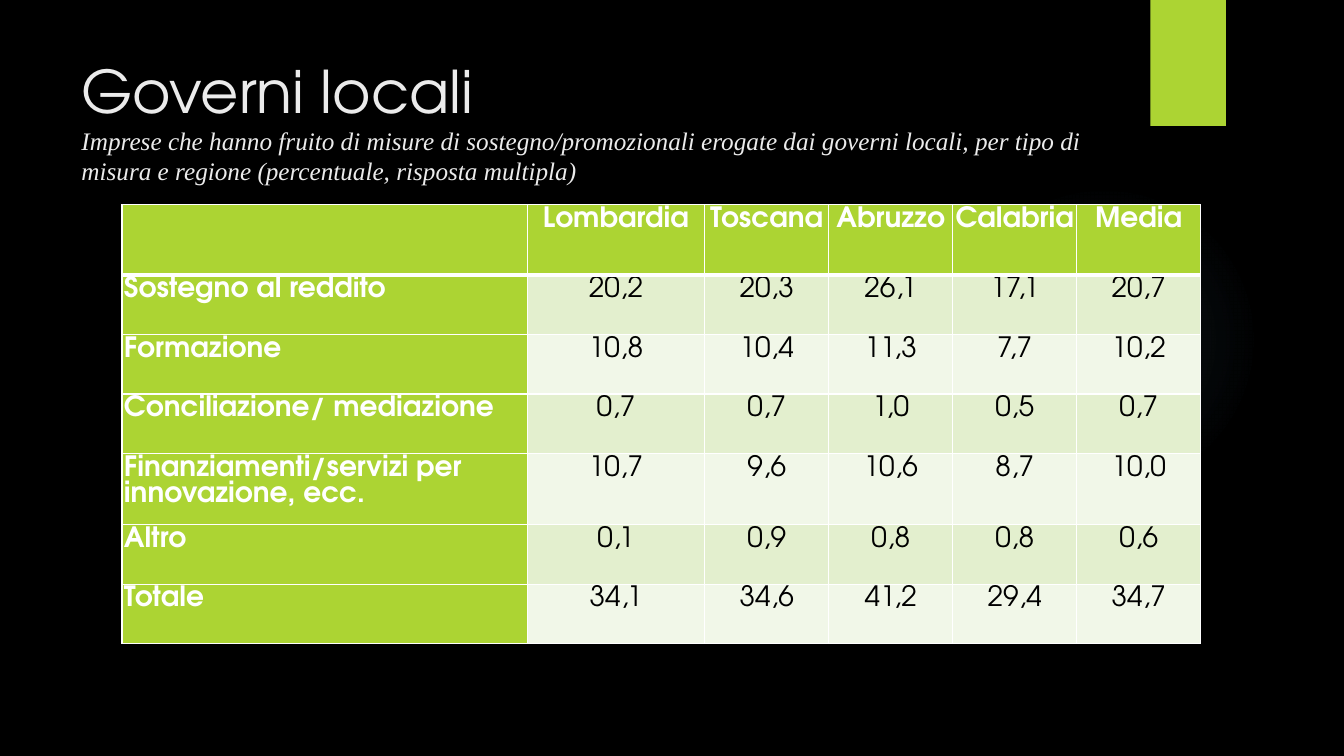
"""Builds the slide on local government support measures by region."""
from dataclasses import dataclass

from lxml import etree
from pptx import Presentation
from pptx import util as u
from pptx.dml import color
from pptx.enum import shapes, text
from pptx.oxml import ns

SANS, SERIF = "TeX Gyre Adventor", "Times New Roman"
LIME, WHITE, BLACK, PALE = "ACD433", "FFFFFF", "000000", "EBEBEB"
BANDS = ("E3EFCE", "F1F7E8")
REGIONS = ("", "Lombardia", "Toscana", "Abruzzo", "Calabria", "Media")
COLUMN_WIDTHS = (4.02, 1.76, 1.23, 1.23, 1.23, 1.23)
HEADER_HEIGHT, ROW_HEIGHT = 0.7, 0.59


@dataclass(frozen=True)
class Measure:
    label: str
    shares: tuple[str, ...]


@dataclass(frozen=True)
class Style:
    size: float
    font: str
    colour: str
    bold: bool = False
    italic: bool = False


TITLE = Style(42, SANS, PALE)
SUBTITLE = Style(18, SERIF, PALE, italic=True)
HEADING = Style(20, SANS, WHITE, bold=True)
FIGURE = Style(20, SANS, BLACK)
MEASURES = (
    Measure("Sostegno al reddito", ("20,2", "20,3", "26,1", "17,1", "20,7")),
    Measure("Formazione", ("10,8", "10,4", "11,3", "7,7", "10,2")),
    Measure("Conciliazione/ mediazione", ("0,7", "0,7", "1,0", "0,5", "0,7")),
    Measure("Finanziamenti/servizi per innovazione, ecc.",
            ("10,7", "9,6", "10,6", "8,7", "10,0")),
    Measure("Altro", ("0,1", "0,9", "0,8", "0,8", "0,6")),
    Measure("Totale", ("34,1", "34,6", "41,2", "29,4", "34,7")),
)


def paint(fill, colour: str) -> None:
    fill.solid()
    fill.fore_color.rgb = color.RGBColor.from_string(colour)


def add_span(para, words: str, style: Style) -> None:
    span = para.add_run()
    span.text = words
    span.font.size = u.Pt(style.size)
    span.font.name = style.font
    span.font.bold = style.bold
    span.font.italic = style.italic
    span.font.color.rgb = color.RGBColor.from_string(style.colour)


def add_plain_shape(page, kind, left: float, top: float, width: float, height: float):
    shape = page.shapes.add_shape(kind, u.Inches(left), u.Inches(top),
                                  u.Inches(width), u.Inches(height))
    shape.shadow.inherit = False
    shape.line.fill.background()
    paint(shape.fill, LIME)
    return shape


def add_glow(page) -> None:
    glow = add_plain_shape(page, shapes.MSO_SHAPE.OVAL, 9.41, 1.83, 3.08, 3.08)
    stops = "".join(
        f'<a:gs pos="{place * 1000}"><a:srgbClr val="7AC4F0">'
        f'<a:alpha val="{alpha * 1000}"/></a:srgbClr></a:gs>'
        for place, alpha in ((0, 7), (36, 6), (69, 0)))
    gradient = etree.fromstring(
        f'<a:gradFill {ns.nsdecls("a")}><a:gsLst>{stops}</a:gsLst><a:path path="circle">'
        '<a:fillToRect l="50000" t="50000" r="50000" b="50000"/></a:path></a:gradFill>')
    properties = glow.element.spPr
    properties.replace(properties.find(ns.qn("a:solidFill")), gradient)


def add_tab(page) -> None:
    tab = add_plain_shape(page, shapes.MSO_SHAPE.RECTANGLE, 11.41, 0, 0.75, 1.25)
    effects = tab.element.spPr.find(ns.qn("a:effectLst"))
    effects.append(etree.fromstring(
        f'<a:outerShdw {ns.nsdecls("a")} blurRad="{u.Pt(3)}" dist="{u.Pt(2)}" '
        'dir="5400000" rotWithShape="0"><a:srgbClr val="000000">'
        '<a:alpha val="45000"/></a:srgbClr></a:outerShdw>'))


def add_title(page) -> None:
    box = page.shapes.add_textbox(u.Inches(0.71), u.Inches(0.49),
                                  u.Inches(10.29), u.Inches(1.53))
    box.text_frame.word_wrap = True
    para = box.text_frame.paragraphs[0]
    add_span(para, "Governi locali", TITLE)
    para.add_line_break()
    add_span(para, "Imprese che hanno fruito di misure di sostegno/promozionali erogate "
             "dai governi locali, per tipo di misura e regione "
             "(percentuale, risposta multipla)", SUBTITLE)


def add_borders(cell, bottom: float, top: float) -> None:
    properties = cell._tc.get_or_add_tcPr()
    for place, (side, width) in enumerate((("L", 1), ("R", 1), ("T", top), ("B", bottom))):
        properties.insert(place, etree.fromstring(
            f'<a:ln{side} {ns.nsdecls("a")} w="{u.Pt(width)}"><a:solidFill>'
            f'<a:srgbClr val="{WHITE}"/></a:solidFill></a:ln{side}>'))


def fill_cell(cell, words: str, row: int, column: int) -> None:
    is_heading = row == 0 or column == 0
    paint(cell.fill, LIME if is_heading else BANDS[(row - 1) % 2])
    add_borders(cell, bottom=3 if row == 0 else 1, top=3 if row == 1 else 1)
    cell.margin_left = cell.margin_right = u.Inches(0.02)
    cell.margin_top = cell.margin_bottom = u.Inches(0.02)
    para = cell.text_frame.paragraphs[0]
    para.line_spacing = 1.0
    para.alignment = text.PP_ALIGN.CENTER if column else text.PP_ALIGN.LEFT
    if words:
        add_span(para, words, HEADING if is_heading else FIGURE)


def add_measures_table(page) -> None:
    rows = [REGIONS] + [(measure.label, *measure.shares) for measure in MEASURES]
    heights = [HEADER_HEIGHT] + [ROW_HEIGHT] * len(MEASURES)
    table = page.shapes.add_table(
        len(rows), len(REGIONS), u.Inches(1.21), u.Inches(2.03),
        u.Inches(sum(COLUMN_WIDTHS)), u.Inches(sum(heights))).table
    for column, width in zip(table.columns, COLUMN_WIDTHS):
        column.width = u.Inches(width)
    for row, height in zip(table.rows, heights):
        row.height = u.Inches(height)
    for row, entries in enumerate(rows):
        for column, words in enumerate(entries):
            fill_cell(table.cell(row, column), words, row, column)


def main() -> None:
    deck = Presentation()
    deck.slide_width, deck.slide_height = u.Inches(13.33), u.Inches(7.5)
    page = deck.slides.add_slide(deck.slide_layouts[6])
    paint(page.background.fill, BLACK)
    add_glow(page)
    add_tab(page)
    add_title(page)
    add_measures_table(page)
    deck.save("out.pptx")


if __name__ == "__main__":
    main()
